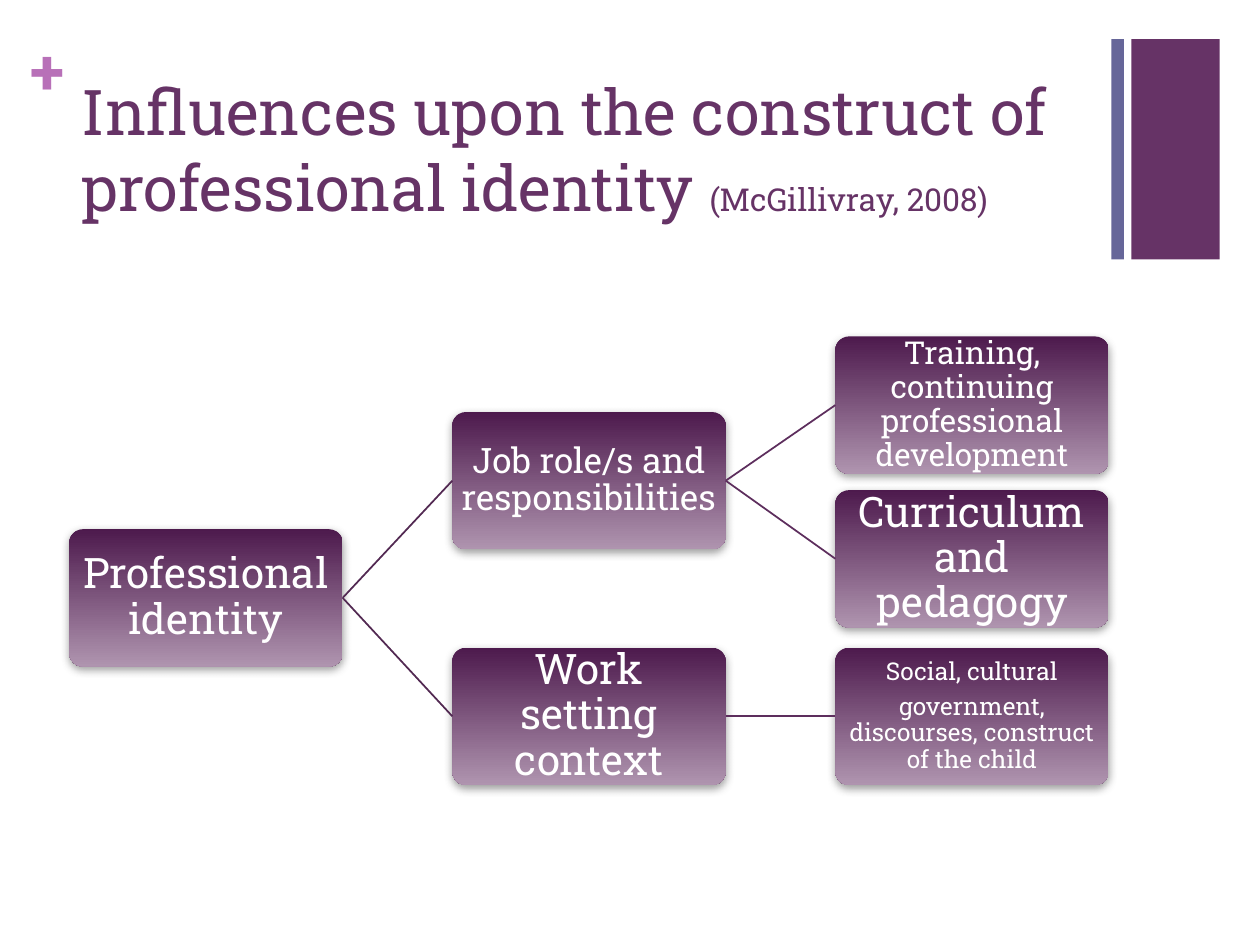
from dataclasses import dataclass

from lxml.etree import SubElement
from pptx import Presentation
from pptx.dml.color import RGBColor
from pptx.enum.shapes import MSO_CONNECTOR, MSO_SHAPE
from pptx.enum.text import MSO_ANCHOR, PP_ALIGN
from pptx.oxml import parse_xml
from pptx.oxml.ns import nsdecls, qn
from pptx.util import Inches, Pt


@dataclass(frozen=True)
class Theme:
    font: str = "Roboto Slab"
    plum: str = "663366"
    slate: str = "666699"
    orchid: str = "B870B8"
    white: str = "FFFFFF"
    dark: str = "4D1A4D"
    pale: str = "AF94AF"
    near: str = "522952"
    far: str = "5D2E5D"
    head: int = 36
    cite: int = 18
    large: int = 24
    medium: int = 20
    normal: int = 18
    small: int = 14


def rgb(code):
    return RGBColor.from_string(code)


def write(para, text, *, font, size, color, bold=False):
    run = para.add_run()
    run.text = text
    run.font.name = font
    run.font.size = Pt(size)
    run.font.bold = bold
    run.font.color.rgb = rgb(color)


class Deck:
    def __init__(self, theme, slide):
        self.theme = theme
        self.shapes = slide.shapes

    def bar(self, left, top, width, height, color):
        shape = self.shapes.add_shape(
            MSO_SHAPE.RECTANGLE, Inches(left), Inches(top), Inches(width), Inches(height))
        shape.shadow.inherit = False
        shape.fill.solid()
        shape.fill.fore_color.rgb = rgb(color)
        shape.line.fill.background()

    def label(self, left, top, width, height, parts, inset=None, bold=False):
        frame = self.shapes.add_textbox(
            Inches(left), Inches(top), Inches(width), Inches(height)).text_frame
        frame.word_wrap = True
        if inset is not None:
            self.pad(frame, inset)
        for text, size, color in parts:
            write(frame.paragraphs[0], text, font=self.theme.font,
                  size=size, color=color, bold=bold)

    def pad(self, frame, inset):
        frame.margin_left = frame.margin_right = Inches(inset)
        frame.margin_top = frame.margin_bottom = Inches(inset)

    def node(self, left, top, size, *lines):
        theme = self.theme
        shape = self.shapes.add_shape(
            MSO_SHAPE.ROUNDED_RECTANGLE, Inches(left), Inches(top), Inches(2.17), Inches(1.09))
        shape.adjustments[0] = 0.1
        shape.fill.gradient()
        shape.fill.gradient_angle = 270
        for stop, color in zip(shape.fill.gradient_stops, (theme.dark, theme.pale)):
            stop.color.rgb = rgb(color)
        shape.line.fill.background()
        self.shade(shape)
        frame = shape.text_frame
        frame.word_wrap = True
        frame.vertical_anchor = MSO_ANCHOR.MIDDLE
        self.pad(frame, 0.05 if size == theme.large else 0.04)
        for index, text in enumerate(lines):
            para = frame.add_paragraph() if index else frame.paragraphs[0]
            para.alignment = PP_ALIGN.CENTER
            para.line_spacing = 0.9
            para.space_after = Pt(size * 0.35)
            write(para, text, font=theme.font, size=size, color=theme.white)
        return shape

    def shade(self, shape):
        shape.shadow.inherit = False
        effects = shape._element.spPr.find(qn("a:effectLst"))
        effects.append(parse_xml(
            f'<a:outerShdw {nsdecls("a")} blurRad="{Pt(5)}" dist="{Pt(2)}" '
            'dir="5400000" rotWithShape="0"><a:srgbClr val="808080">'
            '<a:alpha val="75000"/></a:srgbClr></a:outerShdw>'))

    def link(self, start, end, color):
        line = self.shapes.add_connector(MSO_CONNECTOR.STRAIGHT, 0, 0, 0, 0)
        line.begin_connect(start, 3)
        line.end_connect(end, 1)
        line.line.color.rgb = rgb(color)
        line.line.width = Pt(1)
        SubElement(line._element.spPr, qn("a:effectLst"))


def main():
    show = Presentation()
    show.slide_width, show.slide_height = Inches(10), Inches(7.5)
    theme = Theme()
    deck = Deck(theme, show.slides.add_slide(show.slide_layouts[6]))

    deck.bar(8.98, 0.31, 0.7, 1.75, theme.plum)
    deck.bar(8.82, 0.31, 0.1, 1.75, theme.slate)
    deck.label(0.24, 0.25, 0.29, 0.61, [("+", theme.head, theme.orchid)], inset=0, bold=True)
    deck.label(0.55, 0.53, 8.26, 1.22, [
        ("Influences upon the construct of professional identity ", theme.head, theme.plum),
        ("(McGillivray, 2008)", theme.cite, theme.plum)])

    first, second, third = (0.55 + 3.04 * step for step in range(3))
    root = deck.node(first, 4.2, theme.large, "Professional identity")
    role = deck.node(second, 3.27, theme.medium, "Job role/s and responsibilities")
    work = deck.node(second, 5.14, theme.large, "Work setting context")
    train = deck.node(third, 2.67, theme.normal,
                      "Training, continuing professional development")
    study = deck.node(third, 3.89, theme.large, "Curriculum and pedagogy")
    social = deck.node(third, 5.14, theme.small, "Social, cultural",
                       "government, discourses, construct of the child")

    for start, ends, color in (
            (root, (role, work), theme.near),
            (role, (train, study), theme.far),
            (work, (social,), theme.far)):
        for end in ends:
            deck.link(start, end, color)

    show.save("out.pptx")


if __name__ == "__main__":
    main()
